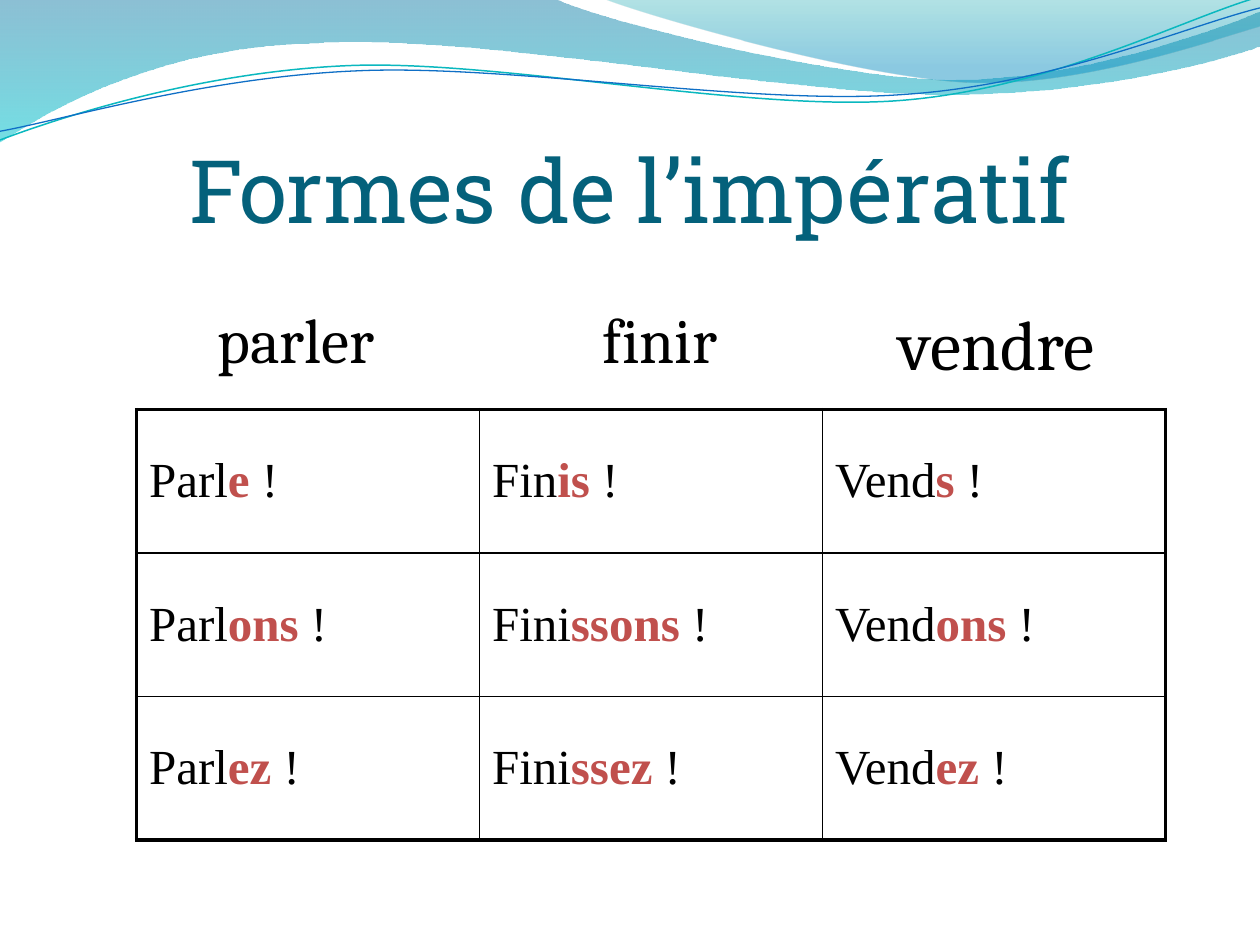
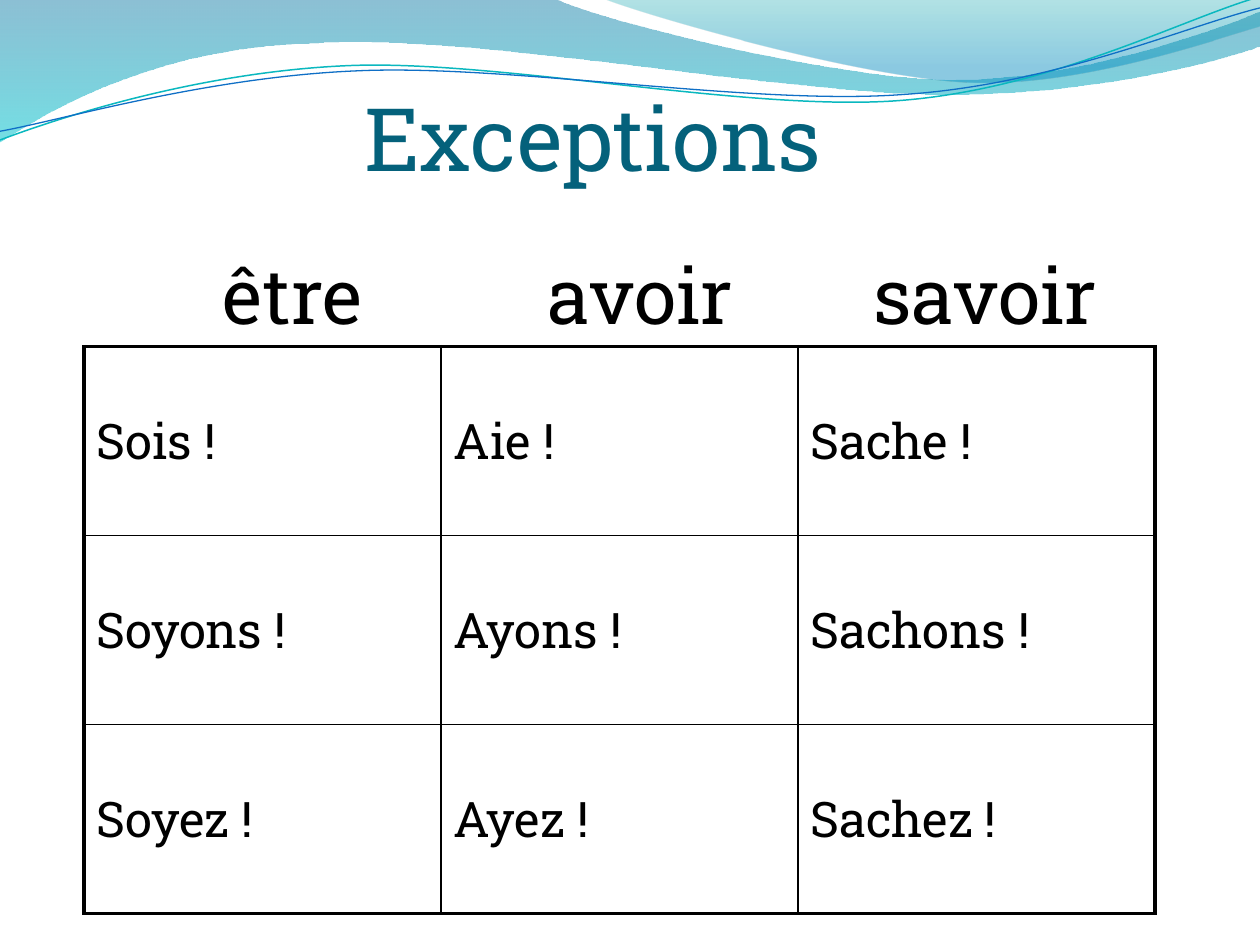
from lxml import etree
from pptx import Presentation
from pptx.dml.color import RGBColor
from pptx.enum.text import MSO_ANCHOR, PP_ALIGN
from pptx.oxml.ns import qn
from pptx.util import Pt

LEFT, CENTER = PP_ALIGN.LEFT, PP_ALIGN.CENTER
TOP, MIDDLE, BOTTOM = MSO_ANCHOR.TOP, MSO_ANCHOR.MIDDLE, MSO_ANCHOR.BOTTOM

BLACK, RED, TEAL = "000000", "C0504D", "04617B"
SLAB, TIMES, CAMBRIA = "Roboto Slab", "Times New Roman", "Cambria"
THIN, THICK = 1, 2.25

# Waves in points: two numbers make a line, six make a curve
BANDS = [
    ([(0, 0), (317, -0.7), (343, 12, 478, 45.5, 546, 45.5),
      (614, 45.5, 690, 19, 720, 6.5), (720.7, 26),
      (708, 32, 626, 55, 537, 54), (448, 54, 275, 20, 185, 24.5),
      (93, 26, 33, 60, -0.7, 81.4), (0, 0)],
     [(0, "0074A1", 45), (1, "00C6CF", 55)]),
    ([(345, -0.7), (366, 8, 491, 44.6, 554, 47),
      (616.5, 49.7, 692, 23, 720, 15), (720, 0), (345, -0.7)],
     [(0, "00A1A9", 30), (0.8, "008BBF", 45)]),
]
CURVES = [
    ([(0, 80), (34.5, 67, 114, 41, 199.5, 37.5),
      (284.5, 34, 427, 64, 513.5, 57.5), (600, 51, 675.5, 11, 718.5, -1.5)],
     "0AB8BF", 0.85),
    ([(0, 75), (34, 69, 118, 44, 204, 40.5),
      (290, 36.5, 430, 60.5, 516, 54), (602, 48.5, 677.5, 15, 720, 4.5)],
     "0F6FC6", 0.75),
]


def tint(code):
    return RGBColor.from_string(code)


def put(item, values):
    for name, value in values.items():
        setattr(item, name, value)


def bend(shape, steps):
    """Turn the straight parts of an outline into Bezier curves."""
    lines = list(shape.element.iter(qn("a:lnTo")))
    for line, step in zip(lines, steps[1:]):
        if len(step) == 2:
            continue
        curve = etree.Element(qn("a:cubicBezTo"))
        for x, y in zip(step[::2], step[1::2]):
            etree.SubElement(curve, qn("a:pt"), x=str(Pt(x) - shape.left),
                             y=str(Pt(y) - shape.top))
        line.getparent().replace(line, curve)


class Deck:
    def __init__(self):
        self.file = Presentation()
        put(self.file, {"slide_width": Pt(720), "slide_height": Pt(540)})
        self.blank = self.file.slide_layouts[6]
        for holder in list(self.blank.placeholders):
            holder.element.getparent().remove(holder.element)
        self.shapes = None
        self.waved = False

    def page(self, title, box):
        """Start a slide with its title; the first one sets the waves."""
        self.shapes = self.file.slides.add_slide(self.blank).shapes
        if not self.waved:
            self.waves()
        self.text(title, box, (SLAB, 50, TEAL), align=CENTER, anchor=BOTTOM,
                  inset=(0, 3.6, 0, 0))

    def waves(self):
        """Draw the waves and move them to the shared layout."""
        for steps, stops in BANDS:
            self.band(steps, stops)
        for steps, color, width in CURVES:
            self.curve(steps, color, width)
        for shape in list(self.shapes):
            self.blank.shapes.element.append(shape.element)
        self.waved = True

    def outline(self, steps, close):
        dots = [(Pt(step[-2]), Pt(step[-1])) for step in steps]
        pen = self.shapes.build_freeform(*dots[0])
        pen.add_line_segments(dots[1:], close=close)
        shape = pen.convert_to_shape()
        shape.shadow.inherit = False
        bend(shape, steps)
        return shape

    def band(self, steps, stops):
        shape = self.outline(steps, True)
        shape.line.fill.background()
        shape.fill.gradient()
        shape.fill.gradient_angle = 270
        for stop, (place, color, _) in zip(shape.fill.gradient_stops, stops):
            stop.color.rgb = tint(color)
            stop.position = place
        marks = shape.element.spPr.iter(qn("a:srgbClr"))
        for mark, (_, _, alpha) in zip(marks, stops):
            etree.SubElement(mark, qn("a:alpha"), val=str(alpha * 1000))

    def curve(self, steps, color, width):
        shape = self.outline(steps, False)
        shape.fill.background()
        shape.line.color.rgb = tint(color)
        shape.line.width = Pt(width)

    def run(self, line, words, style, bold=False):
        face, size, color = style
        run = line.add_run()
        run.text = words
        put(run.font, {"name": face, "size": Pt(size), "bold": bold})
        run.font.color.rgb = tint(color)

    def text(self, words, box, style, align=LEFT, anchor=TOP, wrap=True,
             inset=(7.2, 3.6, 7.2, 3.6)):
        frame = self.shapes.add_textbox(*map(Pt, box)).text_frame
        left, top, right, bottom = map(Pt, inset)
        put(frame, {"word_wrap": wrap, "vertical_anchor": anchor,
                    "margin_left": left, "margin_top": top,
                    "margin_right": right, "margin_bottom": bottom})
        line = frame.paragraphs[0]
        line.alignment = align
        self.run(line, words, style)

    def table(self, rows, box, face):
        """Add a grid; in a cell, | sets off the verb ending."""
        high, wide = len(rows), len(rows[0])
        grid = self.shapes.add_table(high, wide, *map(Pt, box)).table
        put(grid, {"first_row": False, "horz_banding": False})
        for col in grid.columns:
            col.width = Pt(box[2] / wide)
        for row in grid.rows:
            row.height = Pt(box[3] / high)
        for r, row in enumerate(rows):
            for c, words in enumerate(row):
                cell = grid.cell(r, c)
                cell.vertical_anchor = MIDDLE
                line = cell.text_frame.paragraphs[0]
                for i, part in enumerate(words.split("|")):
                    ending = i == 1
                    color = RED if ending else BLACK
                    self.run(line, part, (face, 28, color), ending)
                self.border(cell, {"L": c == 0, "R": c == wide - 1,
                                   "T": r == 0, "B": r == high - 1})
                cell.fill.background()

    def border(self, cell, sides):
        props = cell._tc.get_or_add_tcPr()
        for side, outer in sides.items():
            width = str(Pt(THICK if outer else THIN))
            edge = etree.SubElement(props, qn("a:ln" + side), w=width)
            fill = etree.SubElement(edge, qn("a:solidFill"))
            etree.SubElement(fill, qn("a:srgbClr"), val=BLACK)


def main():
    deck = Deck()

    # Regular verbs
    deck.page("Formes de l’impératif", (54, 48, 612, 90))
    deck.table([["Parl|e |!", "Fin|is |!", "Vend|s |!"],
                ["Parl|ons |!", "Fini|ssons |!", "Vend|ons |!"],
                ["Parl|ez |!", "Fini|ssez |!", "Vend|ez |!"]],
               (78, 234, 588, 246), TIMES)
    for verb, left, width in (("finir", 323, 108), ("parler", 103, 132)):
        deck.text(verb, (left, 168, width, 51), (CAMBRIA, 36, BLACK),
                  align=CENTER)
    deck.text("vendre", (506.5, 168, 129, 55), (CAMBRIA, 40, BLACK),
              wrap=False)

    # Irregular verbs
    deck.page("Exceptions", (54, 30, 570, 78))
    deck.table([["Sois !", "Aie !", "Sache !"],
                ["Soyons !", "Ayons !", "Sachons !"],
                ["Soyez !", "Ayez !", "Sachez !"]],
               (48, 198, 612, 324), SLAB)
    verbs = (("être", 97, False), ("avoir", 136, True), ("savoir", 144, False))
    for i, (verb, width, wrap) in enumerate(verbs):
        deck.text(verb, (120 + 186 * i, 138, width, 60.5), (SLAB, 44, BLACK),
                  wrap=wrap)

    deck.file.save("out.pptx")


if __name__ == "__main__":
    main()
